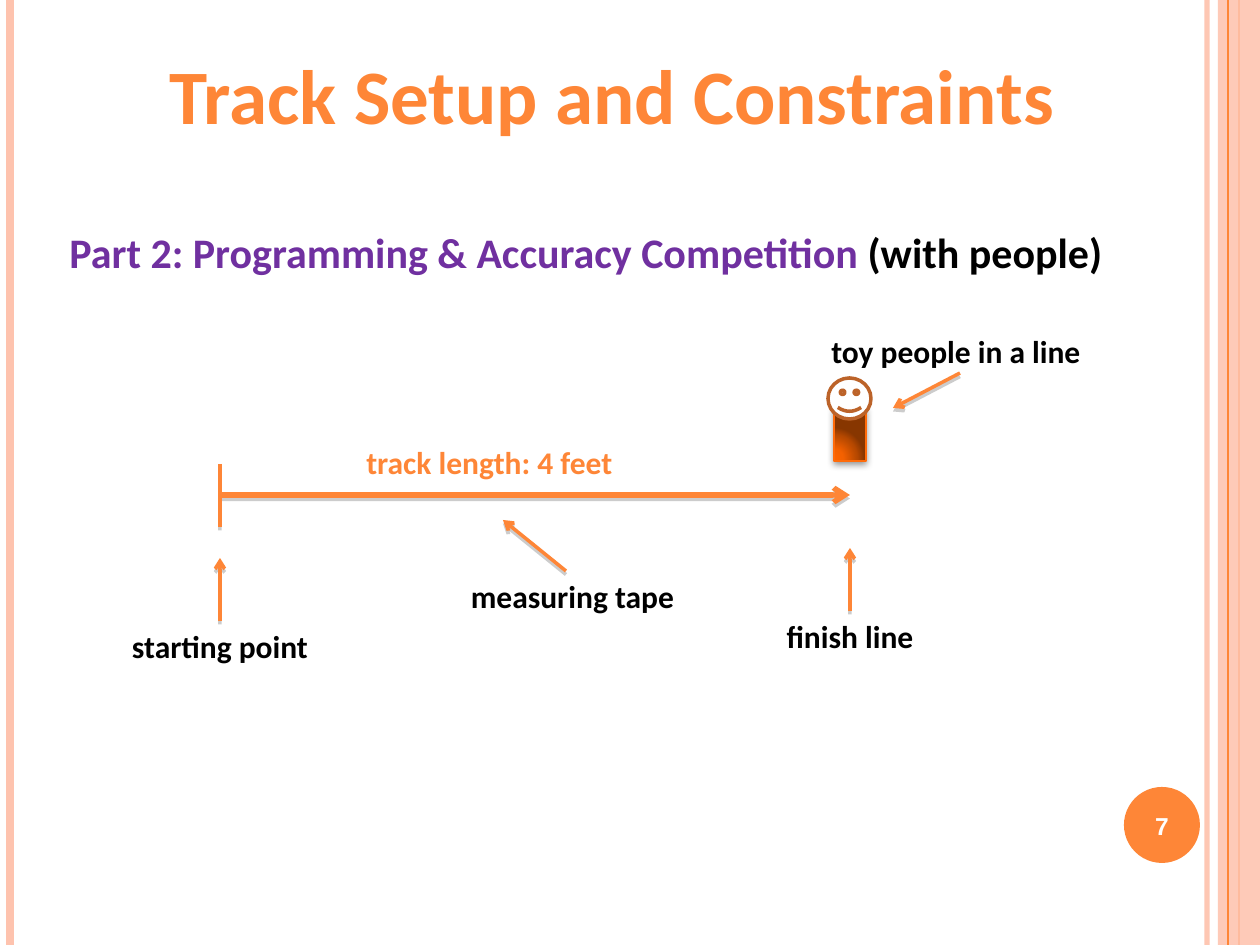
import pptx
import pptx.util
import pptx.dml.color
import pptx.enum.shapes
import pptx.enum.text
import pptx.oxml
import pptx.oxml.ns

COLORS = {
    "orange": "FE8637", "peach": "FEC3AE", "purple": "7030A0",
    "black": "000000", "white": "FFFFFF", "gray": "808080",
    "face": "BC6329", "body_edge": "FF6B0A",
}
BODY_STOPS = [(0, "FD6400"), (30, "F46100"), (75, "B74900"), (100, "873600")]
SLIDE_W, SLIDE_H = 1260, 945
START_X, FINISH_X, TRACK_Y = 220, 850, 495
SHAPES = pptx.enum.shapes.MSO_SHAPE
ALIGN = pptx.enum.text.PP_ALIGN
ANCHOR = pptx.enum.text.MSO_ANCHOR
qn = pptx.oxml.ns.qn
NS = pptx.oxml.ns.nsdecls("a")


def px(length):
    return round(length * 914400 / 126)


def rgb(name):
    return pptx.dml.color.RGBColor.from_string(COLORS[name])


def set_alpha(properties, percent):
    color = next(properties.iter(qn("a:srgbClr")))
    color.append(pptx.oxml.parse_xml(f'<a:alpha {NS} val="{percent * 1000}"/>'))


def add_effects(properties, shadow=None):
    for effects in properties.findall(qn("a:effectLst")):
        properties.remove(effects)
    content = ""
    if shadow:
        color, alpha, blur, distance = shadow
        content = (
            f'<a:outerShdw blurRad="{round(blur * 12700)}" dist="{round(distance * 12700)}"'
            f' dir="5400000" rotWithShape="0"><a:srgbClr val="{COLORS[color]}">'
            f'<a:alpha val="{alpha * 1000}"/></a:srgbClr></a:outerShdw>'
        )
    properties.append(pptx.oxml.parse_xml(f"<a:effectLst {NS}>{content}</a:effectLst>"))


def add_line(slide, start, end, color="orange", width=2.0, alpha=None, arrow=False, shadow=None):
    line = slide.shapes.add_connector(
        pptx.enum.shapes.MSO_CONNECTOR.STRAIGHT, *map(px, start + end))
    line.line.color.rgb = rgb(color)
    line.line.width = pptx.util.Pt(width)
    outline = line.line._get_or_add_ln()
    if alpha:
        set_alpha(outline, alpha)
    if arrow:
        outline.append(pptx.oxml.parse_xml(f'<a:tailEnd {NS} type="arrow"/>'))
    add_effects(line._element.spPr, shadow)


def add_track_line(slide, start, end, width=2.0, arrow=True):
    add_line(slide, start, end, width=width, arrow=arrow, shadow=("gray", 40, 0, 2))


def add_figure(slide, kind, box, fill, edge=None, width=1.0):
    figure = slide.shapes.add_shape(kind, *map(px, box))
    figure.shadow.inherit = False
    figure.fill.solid()
    figure.fill.fore_color.rgb = rgb(fill)
    if edge:
        figure.line.color.rgb = rgb(edge)
        figure.line.width = pptx.util.Pt(width)
    else:
        figure.line.fill.background()
    return figure


def add_text(slide, box, runs, size=18, font="Calibri", align=ALIGN.CENTER,
             anchor=ANCHOR.TOP, wrap=True):
    frame = slide.shapes.add_textbox(*map(px, box)).text_frame
    frame.word_wrap = wrap
    frame.vertical_anchor = anchor
    paragraph = frame.paragraphs[0]
    paragraph.alignment = align
    for words, color in runs:
        run = paragraph.add_run()
        run.text = words
        run.font.name = font
        run.font.size = pptx.util.Pt(size)
        run.font.bold = True
        run.font.color.rgb = rgb(color)


def add_frame(slide):
    def rule(x, color, width, alpha=None):
        add_line(slide, (x, 0), (x, SLIDE_H), color, width, alpha)

    rule(1207, "peach", 3, 93)
    rule(10, "peach", 4.5)
    rule(1239, "orange", 1.5)
    band = add_figure(slide, SHAPES.RECTANGLE, (1218, 0, SLIDE_W - 1218, SLIDE_H), "peach")
    set_alpha(band._element.spPr, 87)
    rule(1228, "orange", 0.75)
    add_figure(slide, SHAPES.OVAL, (1124, 787, 76, 76), "orange")
    add_text(slide, (1120, 790, 84, 72), [("7", "white")], size=14, font="Arial",
             anchor=ANCHOR.MIDDLE)


def add_marker(slide, label, x, bottom):
    add_track_line(slide, (x, bottom), (x, bottom - 63))
    add_text(slide, (x - 110, bottom, 220, 51), [(label, "black")])


def add_toy_person(slide):
    body = add_figure(slide, SHAPES.RECTANGLE, (834, 408, 32, 53), "orange", "body_edge")
    properties = body._element.spPr
    stops = "".join(f'<a:gs pos="{position * 1000}"><a:srgbClr val="{color}"/></a:gs>'
                    for position, color in BODY_STOPS)
    gradient = pptx.oxml.parse_xml(
        f'<a:gradFill {NS} rotWithShape="1"><a:gsLst>{stops}</a:gsLst><a:path path="circle">'
        '<a:fillToRect l="5000" t="100000" r="120000" b="10000"/></a:path></a:gradFill>')
    properties.replace(properties.find(qn("a:solidFill")), gradient)
    add_effects(properties, ("black", 42, 4, 1.6))
    add_track_line(slide, (960, 373), (893, 408))
    add_text(slide, (819, 326, 276, 51), [("toy people in a line", "black")],
             align=ALIGN.LEFT, wrap=False)
    add_figure(slide, SHAPES.SMILEY_FACE, (828, 378, 43, 41), "white", "face", 2)


def main():
    deck = pptx.Presentation()
    deck.slide_width, deck.slide_height = px(SLIDE_W), px(SLIDE_H)
    slide = deck.slides.add_slide(deck.slide_layouts[6])
    add_frame(slide)
    add_text(slide, (57, 220, 1068, 63),
             [("Part 2: Programming & Accuracy Competition ", "purple"),
              ("(with people)", "black")],
             size=24, align=ALIGN.LEFT, wrap=False)
    add_text(slide, (21, 38, 1183, 108), [("Track Setup and Constraints", "orange")],
             size=44, anchor=ANCHOR.BOTTOM)
    add_track_line(slide, (START_X, TRACK_Y), (FINISH_X, TRACK_Y), width=3)
    add_track_line(slide, (START_X, TRACK_Y - 31), (START_X, TRACK_Y + 32), arrow=False)
    add_marker(slide, "starting point", START_X, 621)
    add_track_line(slide, (566, 571), (503, 520))
    add_text(slide, (436, 571, 273, 51), [("measuring tape", "black")])
    add_marker(slide, "finish line", FINISH_X, 611)
    add_toy_person(slide)
    add_text(slide, (299, 437, 381, 51), [("track length: 4 feet", "orange")])
    deck.save("out.pptx")


if __name__ == "__main__":
    main()
